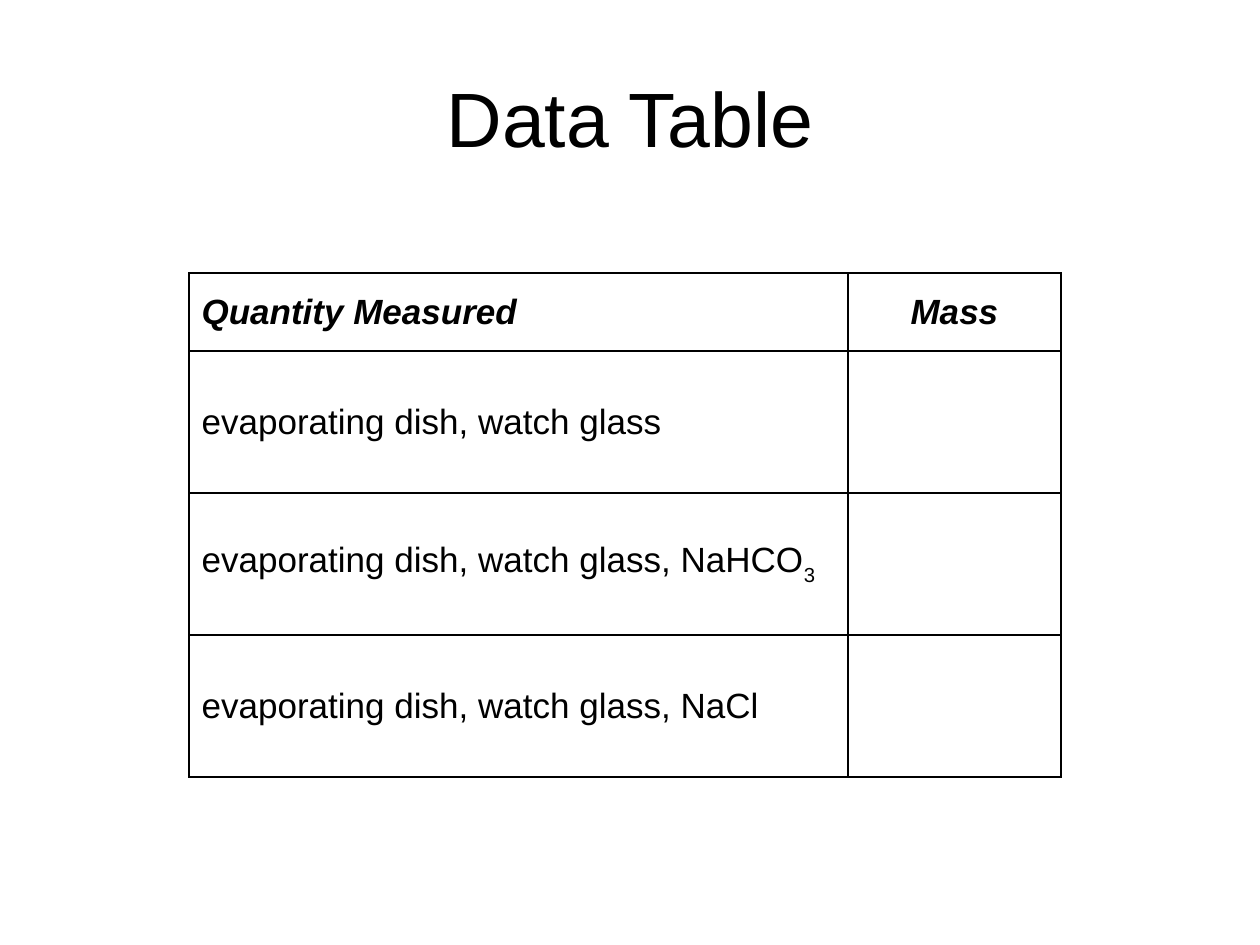
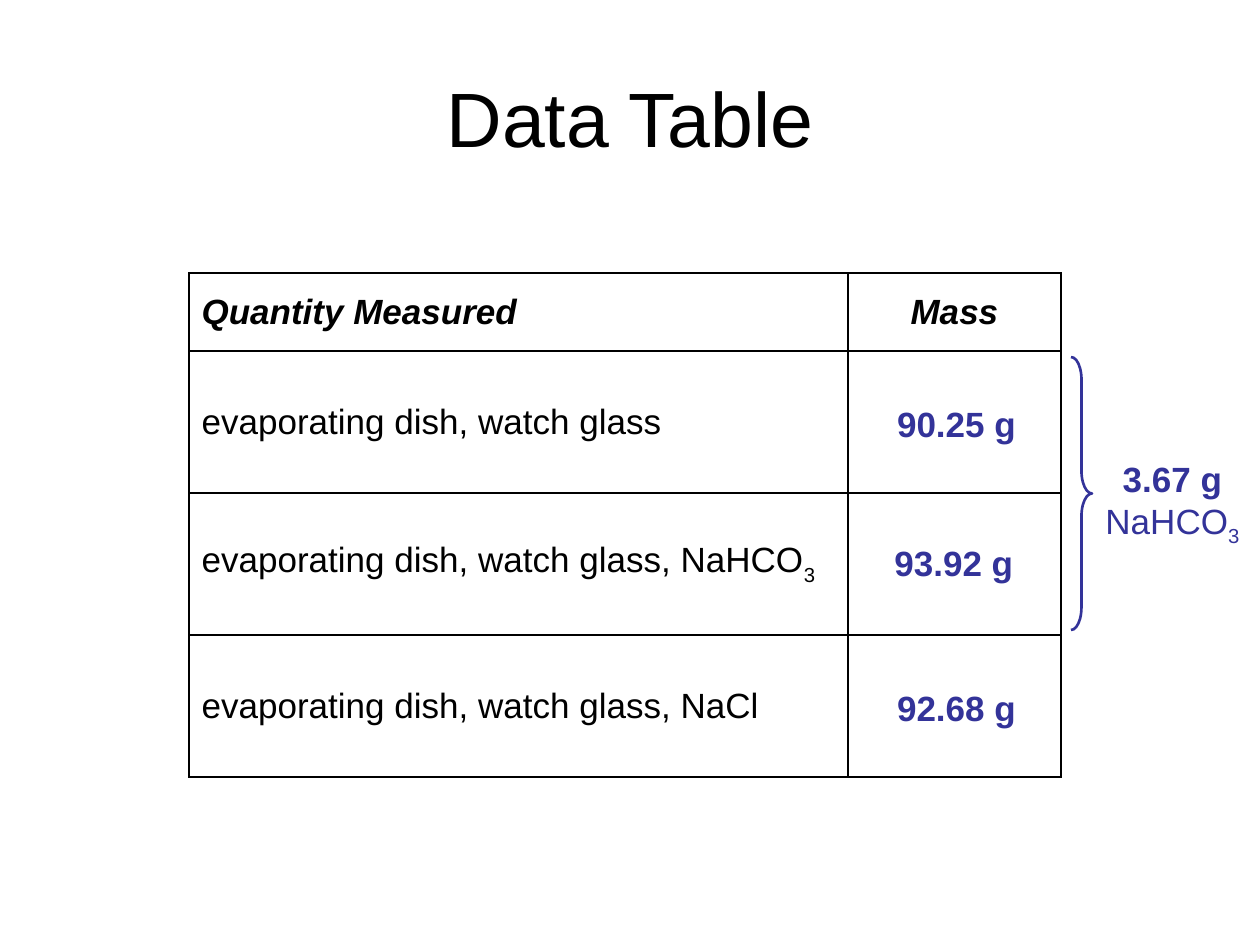
"""Build two data-table slides, first blank and then with the measured masses."""
from lxml.etree import SubElement
from pptx import Presentation
from pptx.dml.color import RGBColor
from pptx.enum.shapes import MSO_SHAPE
from pptx.enum.text import MSO_ANCHOR, MSO_AUTO_SIZE, PP_ALIGN
from pptx.oxml.ns import qn
from pptx.util import Pt

BLACK = RGBColor(0x00, 0x00, 0x00)
INDIGO = RGBColor(0x33, 0x33, 0x99)
FONT = "Arial"
BODY_SIZE = 20

TITLE = "Data Table"
TITLE_BOX = (36, 21.6, 648, 90)
HEADERS = ("Quantity Measured", "Mass")
QUANTITIES = (
    ("evaporating dish, watch glass", ""),
    ("evaporating dish, watch glass, NaHCO", "3"),
    ("evaporating dish, watch glass, NaCl", ""),
)
MASSES = (("90.25 g", 505.5, 226.5), ("93.92 g", 504, 306), ("92.68 g", 505.5, 389))
MASS_SIZE = (84, 31)
DIFFERENCE = ("3.67 g", "NaHCO", "3")
DIFFERENCE_BOX = (624, 258, 92, 55.5)

TABLE_LEFT, TABLE_TOP = 108, 156
COLUMN_WIDTHS = (376.5, 121.75)
ROW_HEIGHTS = (44.6, 81.1, 81.1, 81.1)
BRACE_BOX = (612, 204, 12, 156)


def points(*lengths):
    return [Pt(n) for n in lengths]


def add_run(p, text, color=BLACK, size=BODY_SIZE, bold=False, italic=False, baseline=0):
    r = p.add_run()
    r.text = text
    font = r.font
    font.name, font.size, font.bold, font.italic = FONT, Pt(size), bold, italic
    font.color.rgb = color
    if baseline:
        r._r.get_or_add_rPr().set("baseline", str(baseline * 1000))


def style_cell(cell):
    tc_pr = cell._tc.get_or_add_tcPr()
    for side in ("lnL", "lnR", "lnT", "lnB"):
        ln = SubElement(tc_pr, qn(f"a:{side}"), w=str(Pt(1)))
        fill = SubElement(ln, qn("a:solidFill"))
        SubElement(fill, qn("a:srgbClr"), val=str(BLACK))
    cell.fill.background()
    cell.vertical_anchor = MSO_ANCHOR.MIDDLE


def add_data_table(s):
    box = points(TABLE_LEFT, TABLE_TOP, sum(COLUMN_WIDTHS), sum(ROW_HEIGHTS))
    table = s.shapes.add_table(len(ROW_HEIGHTS), len(COLUMN_WIDTHS), *box).table
    table.first_row = table.horz_banding = False
    for column, width in zip(table.columns, COLUMN_WIDTHS):
        column.width = Pt(width)
    for row, height in zip(table.rows, ROW_HEIGHTS):
        row.height = Pt(height)
    for cell in table.iter_cells():
        style_cell(cell)
    for i, header in enumerate(HEADERS):
        p = table.cell(0, i).text_frame.paragraphs[0]
        p.alignment = PP_ALIGN.CENTER if i else PP_ALIGN.LEFT
        add_run(p, header, bold=True, italic=True)
    for i, (quantity, subscript) in enumerate(QUANTITIES, 1):
        p = table.cell(i, 0).text_frame.paragraphs[0]
        add_run(p, quantity)
        if subscript:
            add_run(p, subscript, baseline=-30)


def add_label(s, box):
    tf = s.shapes.add_textbox(*points(*box)).text_frame
    tf.word_wrap = False
    tf.auto_size = MSO_AUTO_SIZE.SHAPE_TO_FIT_TEXT
    return tf


def add_data_slide(prs):
    s = prs.slides.add_slide(prs.slide_layouts[5])
    title = s.shapes.title
    title.left, title.top, title.width, title.height = points(*TITLE_BOX)
    title.text_frame.vertical_anchor = MSO_ANCHOR.MIDDLE
    p = title.text_frame.paragraphs[0]
    p.alignment = PP_ALIGN.CENTER
    add_run(p, TITLE, size=44)
    add_data_table(s)
    return s


def add_results(s):
    for mass, left, top in MASSES:
        tf = add_label(s, (left, top, *MASS_SIZE))
        add_run(tf.paragraphs[0], mass, INDIGO, bold=True)

    brace = s.shapes.add_shape(MSO_SHAPE.RIGHT_BRACE, *points(*BRACE_BOX))
    brace.adjustments[0], brace.adjustments[1] = 1.08, 0.5
    brace.shadow.inherit = False
    brace.fill.background()
    brace.line.color.rgb = INDIGO
    brace.line.width = Pt(1.5)

    mass, formula, subscript = DIFFERENCE
    tf = add_label(s, DIFFERENCE_BOX)
    add_run(tf.paragraphs[0], mass, INDIGO, bold=True)
    p = tf.add_paragraph()
    add_run(p, formula, INDIGO)
    add_run(p, subscript, INDIGO, baseline=-25)
    for p in tf.paragraphs:
        p.alignment = PP_ALIGN.CENTER


def main():
    prs = Presentation()
    prs.slide_width, prs.slide_height = points(720, 540)
    add_data_slide(prs)
    add_results(add_data_slide(prs))
    prs.save("out.pptx")


if __name__ == "__main__":
    main()
